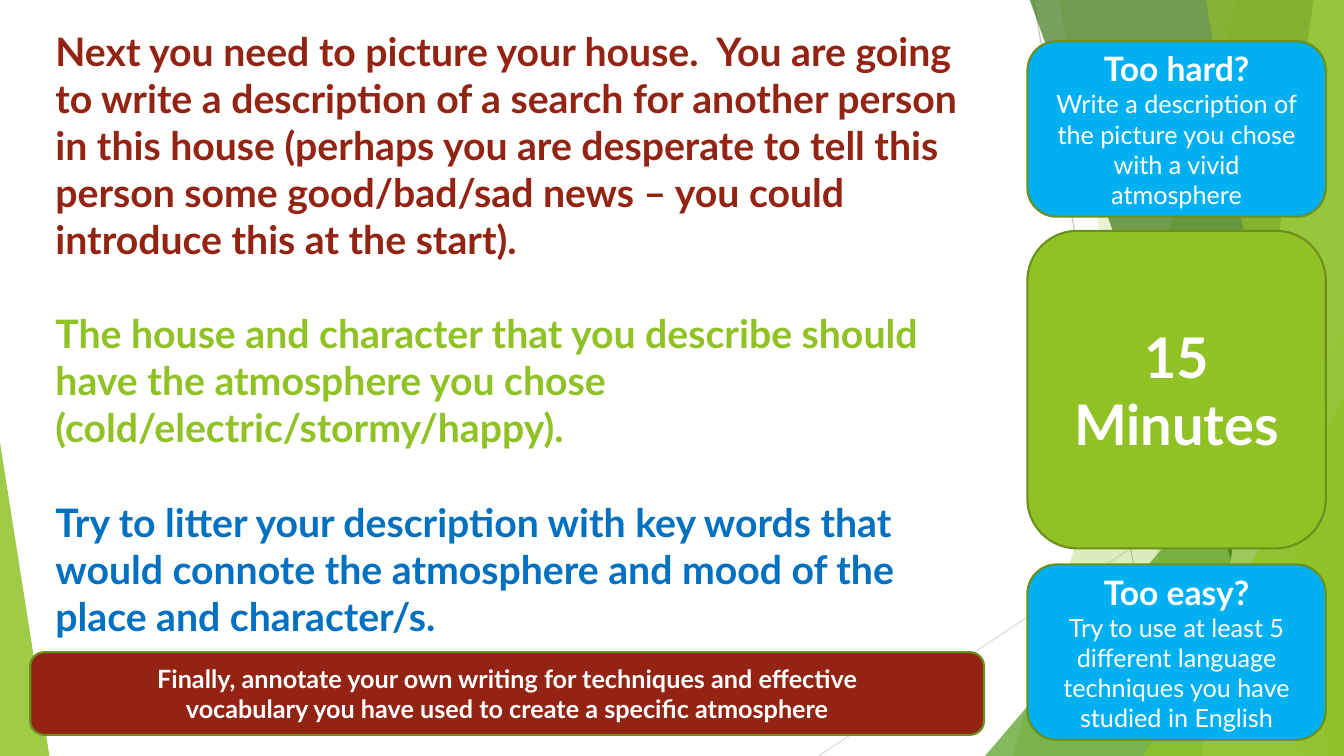
from dataclasses import dataclass

from lxml.etree import SubElement
from pptx import Presentation
from pptx.dml.color import RGBColor
from pptx.enum.shapes import MSO_CONNECTOR, MSO_SHAPE
from pptx.enum.text import MSO_ANCHOR, MSO_AUTO_SIZE, PP_ALIGN
from pptx.oxml.ns import qn
from pptx.util import Inches, Pt

WIDTH, HEIGHT = 13.33, 7.5
FONT = "Lato"
WHITE, GREEN, BLUE, RED = "FFFFFF", "90C226", "00B0F0", "932313"
OUTLINE = "6B901C"
PANEL_LEFT, PANEL_WIDTH = 10.19, 2.96


@dataclass
class Ray:
    start: tuple[float, float]
    end: tuple[float, float]
    color: str


@dataclass
class Band:
    """A facet from the slide's right edge to a slanted left side."""
    top_left: float
    bottom_left: float
    color: str
    opacity: int


@dataclass
class Wedge:
    left: float
    top: float
    width: float
    apex: float
    color: str
    opacity: int


@dataclass
class Line:
    text: str
    size: int
    bold: bool = True


@dataclass
class Panel:
    left: float
    top: float
    width: float
    height: float
    color: str
    lines: list[Line]


RAYS = [
    Ray((10.25, 0), (11.58, HEIGHT), "BFBFBF"),
    Ray((WIDTH, 4.03), (8.12, HEIGHT), "D9D9D9"),
]
# Facets from back to front
FACETS = [
    Band(12.28, 10.04, GREEN, 30),
    Band(10.5, 11.83, GREEN, 20),
    Wedge(9.77, 3.33, 3.56, 1, "54A021", 72),
    Band(10.21, 12.91, "3F7819", 70),
    Band(13.03, 11.92, "C0E474", 70),
    Band(11.96, 13.18, GREEN, 65),
    Wedge(11.34, 3.93, 1.99, 1, GREEN, 80),
    Wedge(0, 4.39, 0.49, 0, GREEN, 85),
]
INSTRUCTIONS = [
    ("Next you need to picture your house.  You are going to write a description "
     "of a search for another person in this house (perhaps you are desperate to "
     "tell this person some good/bad/sad news – you could introduce this at the "
     "start).", RED),
    ("The house and character that you describe should have the atmosphere you "
     "chose (cold/electric/stormy/happy).", GREEN),
    ("Try to litter your description with key words that would connote the "
     "atmosphere and mood of the place and character/s.", "0070C0"),
]
PANELS = [
    Panel(PANEL_LEFT, 2.29, PANEL_WIDTH, 3.15, GREEN, [Line("15 Minutes", 40)]),
    Panel(PANEL_LEFT, 0.41, PANEL_WIDTH, 1.74, BLUE, [
        Line("Too hard?", 24),
        Line("Write a description of the picture you chose with a vivid atmosphere",
             18, False)]),
    Panel(PANEL_LEFT, 5.6, PANEL_WIDTH, 1.74, BLUE, [
        Line("Too easy?", 24),
        Line("Try to use at least 5 different language techniques you have studied "
             "in English", 18, False)]),
    Panel(0.3, 6.47, 9.46, 0.82, RED, [
        Line("Finally, annotate your own writing for techniques and effective", 18),
        Line("vocabulary you have used to create a specific atmosphere", 18)]),
]


def rgb(color: str) -> RGBColor:
    return RGBColor.from_string(color)


def write(para, text: str, *, size: int, color: str, bold: bool = True,
          align=PP_ALIGN.CENTER, before: float = 0) -> None:
    para.alignment = align
    para.space_before = Pt(before)
    span = para.add_run()
    span.text = text
    span.font.name = FONT
    span.font.size = Pt(size)
    span.font.bold = bold
    span.font.color.rgb = rgb(color)


def paint(shape, color: str, opacity: int = 100) -> None:
    shape.shadow.inherit = False
    shape.fill.solid()
    shape.fill.fore_color.rgb = rgb(color)
    if opacity < 100:
        fill_color = shape.element.spPr.find(f"{qn('a:solidFill')}/{qn('a:srgbClr')}")
        SubElement(fill_color, qn("a:alpha"), val=str(opacity * 1000))


def draw_ray(page, ray: Ray) -> None:
    points = [Inches(value) for value in (*ray.start, *ray.end)]
    connector = page.shapes.add_connector(MSO_CONNECTOR.STRAIGHT, *points)
    connector.line.color.rgb = rgb(ray.color)
    connector.line.width = Pt(0.75)
    SubElement(connector.element.spPr, qn("a:effectLst"))


def draw_facet(page, facet: Band | Wedge) -> None:
    if isinstance(facet, Band):
        corners = [(facet.top_left, -0.01), (WIDTH, -0.01),
                   (WIDTH, HEIGHT), (facet.bottom_left, HEIGHT)]
        first, *others = [(Inches(x), Inches(y)) for x, y in corners]
        builder = page.shapes.build_freeform(*first)
        builder.add_line_segments(others, close=True)
        shape = builder.convert_to_shape()
    else:
        shape = page.shapes.add_shape(
            MSO_SHAPE.ISOSCELES_TRIANGLE, Inches(facet.left), Inches(facet.top),
            Inches(facet.width), Inches(HEIGHT - facet.top))
        shape.adjustments[0] = facet.apex
    paint(shape, facet.color, facet.opacity)
    shape.line.fill.background()


def draw_instructions(page) -> None:
    title = page.shapes.title
    title.left, title.top = Inches(0.45), Inches(0.19)
    title.width, title.height = Inches(9.43), Inches(6.69)
    title.element.getparent().append(title.element)
    frame = title.text_frame
    frame.word_wrap = True
    frame.auto_size = MSO_AUTO_SIZE.NONE
    frame.vertical_anchor = MSO_ANCHOR.TOP
    frame.margin_top = Inches(0.08)
    for index, (text, color) in enumerate(INSTRUCTIONS):
        para = frame.add_paragraph() if index else frame.paragraphs[0]
        write(para, text, size=28, color=color, align=PP_ALIGN.LEFT,
              before=33.6 if index else 0)


def draw_panel(page, panel: Panel) -> None:
    box = page.shapes.add_shape(
        MSO_SHAPE.ROUNDED_RECTANGLE, Inches(panel.left), Inches(panel.top),
        Inches(panel.width), Inches(panel.height))
    paint(box, panel.color)
    box.line.color.rgb = rgb(OUTLINE)
    box.line.width = Pt(1.5)
    frame = box.text_frame
    frame.word_wrap = True
    frame.vertical_anchor = MSO_ANCHOR.MIDDLE
    for index, line in enumerate(panel.lines):
        para = frame.add_paragraph() if index else frame.paragraphs[0]
        write(para, line.text, size=line.size, color=WHITE, bold=line.bold)


def main() -> None:
    deck = Presentation()
    deck.slide_width, deck.slide_height = Inches(WIDTH), Inches(HEIGHT)
    page = deck.slides.add_slide(deck.slide_layouts[5])

    # Faceted background
    for ray in RAYS:
        draw_ray(page, ray)
    for facet in FACETS:
        draw_facet(page, facet)

    # Task text and side panels
    draw_instructions(page)
    for panel in PANELS:
        draw_panel(page, panel)

    deck.save("out.pptx")


if __name__ == "__main__":
    main()
